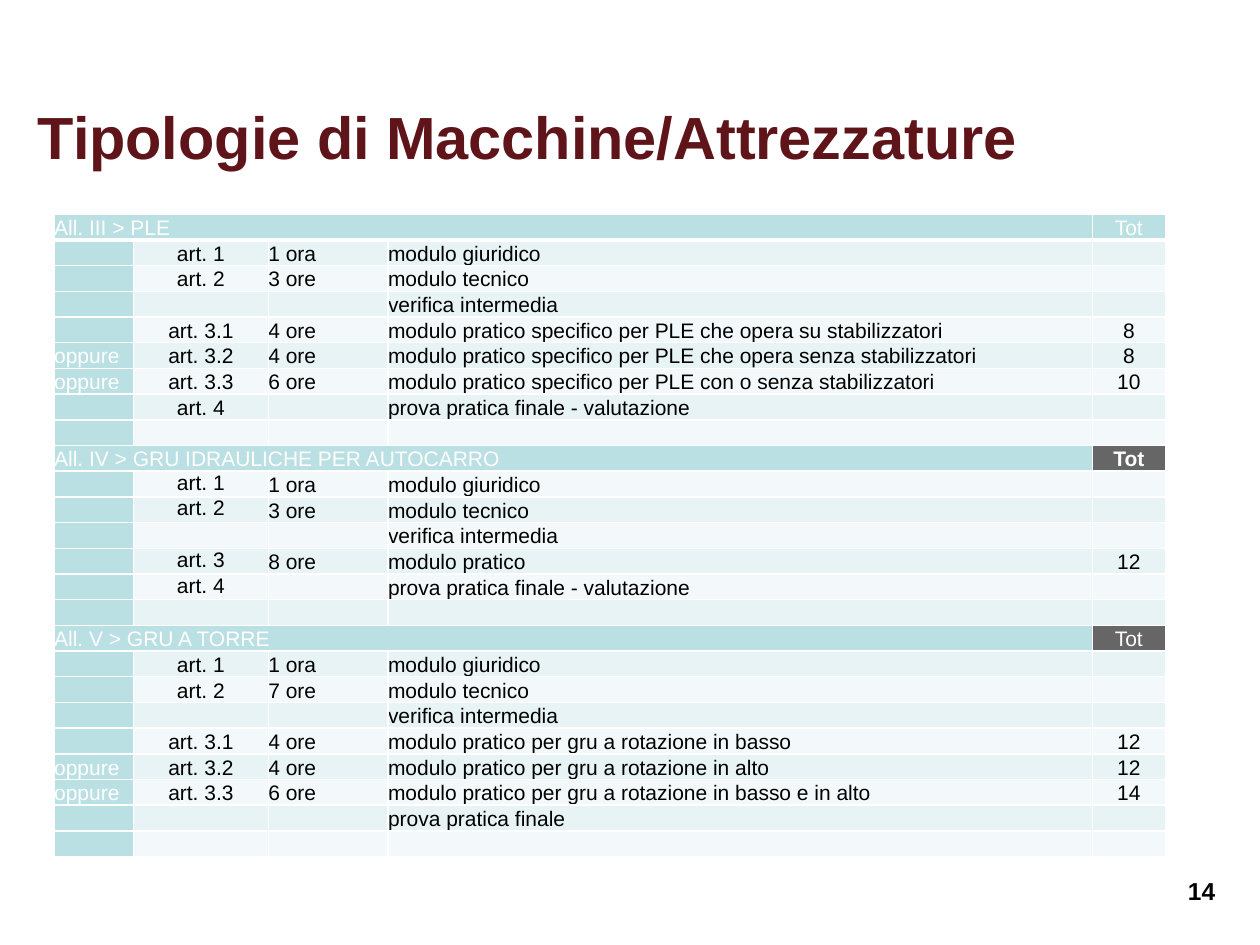
from lxml import etree
from pptx import Presentation
from pptx.dml.color import RGBColor
from pptx.enum.text import MSO_ANCHOR, MSO_AUTO_SIZE, PP_ALIGN
from pptx.oxml.ns import qn
from pptx.util import Inches, Pt

LEFT, CENTER = PP_ALIGN.LEFT, PP_ALIGN.CENTER
TOP, MIDDLE, BOTTOM = MSO_ANCHOR.TOP, MSO_ANCHOR.MIDDLE, MSO_ANCHOR.BOTTOM

COLORS = {"title": "5F1419", "text": "000000", "white": "FFFFFF", "header": "BBE0E3",
          "dark": "666666", "odd": "E7F3F4", "even": "F3F9FA"}

# Each section: heading, fill and weight of its total, anchor of the articles, rows
SECTIONS = [
    ("All. III > PLE", "header", False, BOTTOM, [
        ("", "art. 1", "1 ora", "modulo giuridico", ""),
        ("", "art. 2", "3 ore", "modulo tecnico", ""),
        ("", "", "", "verifica intermedia", ""),
        ("", "art. 3.1", "4 ore",
         "modulo pratico specifico per PLE che opera su stabilizzatori", "8"),
        ("oppure", "art. 3.2", "4 ore",
         "modulo pratico specifico per PLE che opera senza stabilizzatori", "8"),
        ("oppure", "art. 3.3", "6 ore",
         "modulo pratico specifico per PLE con o senza stabilizzatori", "10"),
        ("", "art. 4", "", "prova pratica finale - valutazione", ""),
        ("", "", "", "", ""),
    ]),
    ("All. IV > GRU IDRAULICHE PER AUTOCARRO", "dark", True, TOP, [
        ("", "art. 1", "1 ora", "modulo giuridico", ""),
        ("", "art. 2", "3 ore", "modulo tecnico", ""),
        ("", "", "", "verifica intermedia", ""),
        ("", "art. 3", "8 ore", "modulo pratico", "12"),
        ("", "art. 4", "", "prova pratica finale - valutazione", ""),
        ("", "", "", "", ""),
    ]),
    ("All. V > GRU A TORRE", "dark", False, BOTTOM, [
        ("", "art. 1", "1 ora", "modulo giuridico", ""),
        ("", "art. 2", "7 ore", "modulo tecnico", ""),
        ("", "", "", "verifica intermedia", ""),
        ("", "art. 3.1", "4 ore", "modulo pratico per gru a rotazione in basso", "12"),
        ("oppure", "art. 3.2", "4 ore", "modulo pratico per gru a rotazione in alto", "12"),
        ("oppure", "art. 3.3", "6 ore",
         "modulo pratico per gru a rotazione in basso e in alto", "14"),
        ("", "", "", "prova pratica finale", ""),
        ("", "", "", "", ""),
    ]),
]
COLUMN_WIDTHS = [0.63, 1.07, 0.95, 5.59, 0.58]
ALIGNMENTS = [LEFT, CENTER, LEFT, LEFT, CENTER]
ROW_COUNT = sum(1 + len(section[-1]) for section in SECTIONS)
TABLE_HEIGHT = 5.1


def write(paragraph, text, color, size, bold=False, alignment=LEFT):
    paragraph.alignment = alignment
    run = paragraph.add_run()
    run.text = text
    for name, value in {"name": "Arial", "size": Pt(size), "bold": bold}.items():
        setattr(run.font, name, value)
    run.font.color.rgb = RGBColor.from_string(COLORS[color])


def fill_cell(cell, text, fill, color, alignment, anchor=BOTTOM, bold=False, bottom_line=1):
    margins = dict.fromkeys(("margin_left", "margin_right", "margin_top", "margin_bottom"), 0)
    for name, value in {**margins, "vertical_anchor": anchor}.items():
        setattr(cell, name, value)
    # White borders come before the fill in the cell properties
    properties = cell._tc.get_or_add_tcPr()
    for side, width in {"lnL": 1, "lnR": 1, "lnT": 1, "lnB": bottom_line}.items():
        line = etree.SubElement(properties, qn(f"a:{side}"), w=str(Pt(width)))
        solid = etree.SubElement(line, qn("a:solidFill"))
        etree.SubElement(solid, qn("a:srgbClr"), val=COLORS["white"])
    cell.fill.solid()
    cell.fill.fore_color.rgb = RGBColor.from_string(COLORS[fill])
    paragraph = cell.text_frame.paragraphs[0]
    if text:
        write(paragraph, text, color, 12, bold, alignment)
    else:
        # Empty cells need a small size too, or their rows grow
        etree.SubElement(paragraph._p, qn("a:endParaRPr"), sz="1200")


presentation = Presentation()
presentation.slide_width, presentation.slide_height = Inches(10), Inches(7.5)
slide = presentation.slides.add_slide(presentation.slide_layouts[5])

# Title
title = slide.shapes.title
title.left, title.top, title.width, title.height = map(Inches, (0.2, 0.76, 8.5, 0.63))
title.text_frame.auto_size = MSO_AUTO_SIZE.NONE
title.text_frame.vertical_anchor = MIDDLE
write(title.text_frame.paragraphs[0], "Tipologie di Macchine/Attrezzature", "title", 34, True)

# Table of modules
table = slide.shapes.add_table(
    ROW_COUNT, len(COLUMN_WIDTHS), Inches(0.43), Inches(1.7),
    Inches(sum(COLUMN_WIDTHS)), Inches(TABLE_HEIGHT)).table
table.first_row = table.horz_banding = False
for column, width in zip(table.columns, COLUMN_WIDTHS):
    column.width = Inches(width)
for row in table.rows:
    row.height = Inches(TABLE_HEIGHT / ROW_COUNT)

row_index = 0
for heading, total_fill, total_bold, article_anchor, modules in SECTIONS:
    # Section heading across four columns, then the total column
    bottom_line = 3 if row_index == 0 else 1
    table.cell(row_index, 0).merge(table.cell(row_index, 3))
    fill_cell(table.cell(row_index, 0), heading, "header", "white", LEFT,
              bottom_line=bottom_line)
    fill_cell(table.cell(row_index, 4), "Tot", total_fill, "white", CENTER,
              bold=total_bold, bottom_line=bottom_line)
    row_index += 1
    # Banded module rows
    for module in modules:
        band = "odd" if row_index % 2 else "even"
        for column_index, text in enumerate(module):
            fill_cell(table.cell(row_index, column_index), text,
                      band if column_index else "header",
                      "text" if column_index else "white",
                      ALIGNMENTS[column_index],
                      article_anchor if column_index == 1 else BOTTOM)
        row_index += 1

# Slide number
number = slide.shapes.add_textbox(*map(Inches, (9.33, 6.9, 0.67, 0.33)))
number.text_frame.word_wrap = True
write(number.text_frame.paragraphs[0], "14", "text", 14, True)

presentation.save("out.pptx")
